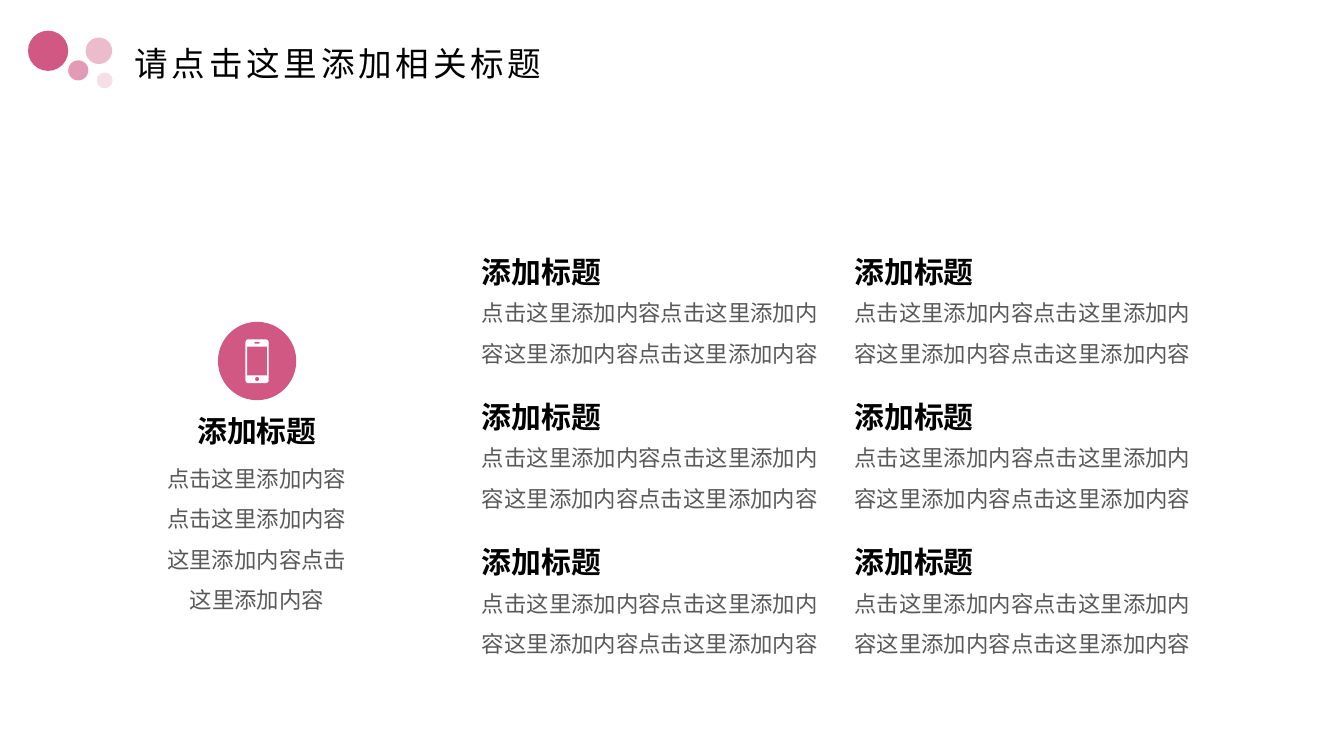
from math import cos, sin, pi
from lxml.etree import SubElement
from pptx import Presentation
from pptx.dml.color import RGBColor as Rgb
from pptx.enum.shapes import MSO_SHAPE as Kind
from pptx.enum.text import MSO_ANCHOR as Anchor, MSO_AUTO_SIZE as Fit, PP_ALIGN as Align
from pptx.oxml.ns import qn
from pptx.util import Cm, Pt

HUES = {
    "rose": "D05883",
    "pink": "E39BB5",
    "blush": "ECBCCD",
    "pale": "F6DEE6",
    "white": "FEFEFE",
    "black": "000000",
    "gray": "595959",
}
HEAD = "添加标题"
BODY = "点击这里添加内容点击这里添加内容这里添加内容点击这里添加内容"


def hue(name):
    return Rgb.from_string(HUES[name])


def paint(shape, color):
    shape.shadow.inherit = False
    shape.fill.solid()
    shape.fill.fore_color.rgb = hue(color)
    shape.line.fill.background()


def add_dot(slide, x, y, size, color):
    dot = slide.shapes.add_shape(Kind.OVAL, Cm(x), Cm(y), Cm(size), Cm(size))
    paint(dot, color)


def style(para, face, size, color, bold=False, space=None):
    para.font.name = face
    para.font.size = Pt(size)
    para.font.bold = bold
    para.font.color.rgb = hue(color)
    for run in para.runs:
        props = run._r.get_or_add_rPr()
        props.set("lang", "zh-CN")
        if space:
            props.set("spc", str(space * 100))
        SubElement(props, qn("a:ea")).set("typeface", face)


def add_title(slide, text):
    title = slide.shapes.title
    title.left, title.top, title.width, title.height = Cm(2.29), Cm(0.48), Cm(21.9), Cm(1.5)
    frame = title.text_frame
    frame.text = text
    frame.auto_size = Fit.NONE
    frame.vertical_anchor = Anchor.MIDDLE
    para = frame.paragraphs[0]
    para.alignment = Align.LEFT
    para.line_spacing = 0.9
    style(para, "Noto Sans CJK SC", 18, "black", space=2)


def add_text(slide, text, x, y, w, h, size, color, align, bold=False, anchor=Anchor.TOP):
    frame = slide.shapes.add_textbox(Cm(x), Cm(y), Cm(w), Cm(h)).text_frame
    frame.word_wrap = True
    frame.vertical_anchor = anchor
    frame.text = text
    para = frame.paragraphs[0]
    para.alignment = align
    para.line_spacing = 1.5
    para.space_after = Pt(6)
    style(para, "Calibri", size, color, bold)


def add_head(slide, x, y, w, align):
    add_text(slide, HEAD, x, y, w, 1.07, 16, "black", align, True, Anchor.MIDDLE)


def add_body(slide, x, y, w, h, align):
    add_text(slide, BODY, x, y, w, h, 12, "gray", align)


def trace(x, y, w, h, r):
    mids = [(x + w - r, y + h - r), (x + r, y + h - r), (x + r, y + r), (x + w - r, y + r)]
    return [
        (Cm(cx + r * cos(turn)), Cm(cy + r * sin(turn)))
        for i, (cx, cy) in enumerate(mids)
        for turn in [(i + step / 4) * pi / 2 for step in range(5)]
    ]


def add_phone(slide):
    case = trace(4.64, 6.41, 0.44, 0.83, 0.06)
    gaps = [
        trace(4.81, 6.46, 0.1, 0.03, 0.01),
        trace(4.82, 7.12, 0.08, 0.08, 0.04),
        trace(4.67, 6.55, 0.38, 0.54, 0),
    ]
    pen = slide.shapes.build_freeform(*case[0])
    pen.add_line_segments(case[1:])
    for gap in gaps:
        pen.move_to(*gap[0])
        pen.add_line_segments(gap[1:])
    paint(pen.convert_to_shape(), "white")


def main():
    deck = Presentation()
    deck.slide_width, deck.slide_height = Cm(25.4), Cm(14.28)
    slide = deck.slides.add_slide(deck.slide_layouts[5])

    for dot in [
        (0.53, 0.58, 0.76, "rose"),
        (1.29, 1.14, 0.38, "pink"),
        (1.62, 0.71, 0.5, "blush"),
        (1.83, 1.37, 0.3, "pale"),
    ]:
        add_dot(slide, *dot)
    add_title(slide, "请点击这里添加相关标题")

    add_dot(slide, 4.12, 6.08, 1.48, "rose")
    add_phone(slide)
    add_head(slide, 2.9, 7.42, 3.91, Align.CENTER)
    add_body(slide, 2.85, 8.41, 4.01, 3.1, Align.CENTER)

    for row in range(3):
        for col in range(2):
            x, y = 8.86 + col * 7.04, 4.42 + row * 2.74
            add_head(slide, x, y, 4.01, Align.LEFT)
            add_body(slide, x, y + 0.86, 7.04, 1.88, Align.LEFT)

    deck.save("out.pptx")


if __name__ == "__main__":
    main()
